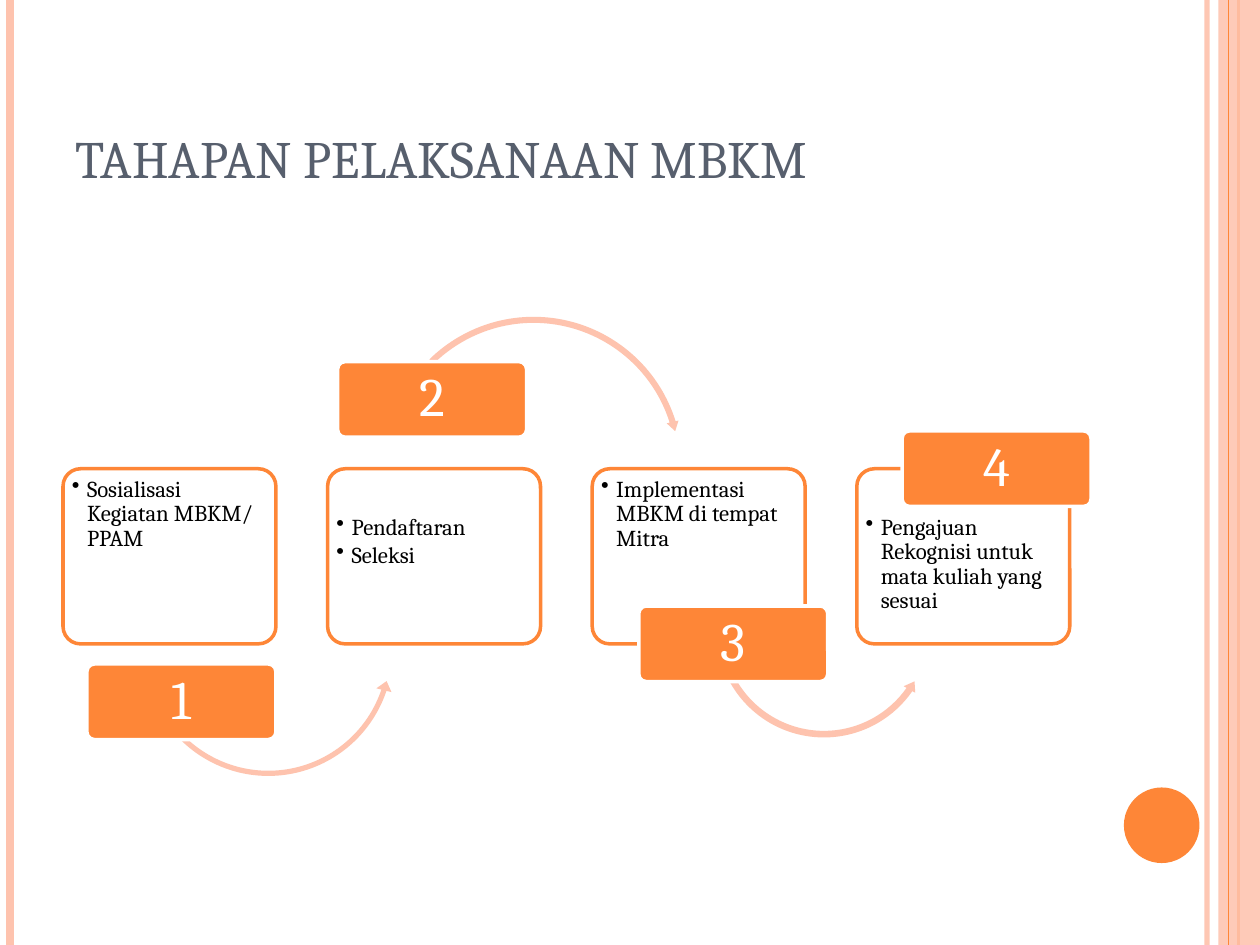
from pptx import Presentation
from pptx.dml.color import RGBColor
from pptx.enum.shapes import MSO_CONNECTOR, MSO_SHAPE
from pptx.enum.text import MSO_ANCHOR, PP_ALIGN
from pptx.oxml.ns import qn
from pptx.util import Inches, Pt
from lxml.etree import SubElement

FONT = "Cambria"
COLORS = {"orange": "FE8637", "peach": "FEC3AE", "slate": "575F6D",
          "white": "FFFFFF", "black": "000000"}

CARD_LEFT, CARD_TOP, CARD_PITCH = 0.5, 3.72, 2.1
CARD_SIZE = (1.69, 1.39)
BADGE_SIZE = (1.5, 0.6)

LEFT_ARROW = MSO_SHAPE.LEFT_CIRCULAR_ARROW
RIGHT_ARROW = MSO_SHAPE.CIRCULAR_ARROW

# Card lines, top inset of the text, badge position,
# then the arrow's preset, left, top, diameter and adjustments
STAGES = [
    (["Sosialisasi Kegiatan MBKM/ PPAM"], 0.03, (0.69, 5.27),
     (LEFT_ARROW, 1.1, 4.14, 2.06, (0.02, 2.68, 11.15, 80.96, 0.03))),
    (["Pendaftaran", "Seleksi"], 0.33, (2.68, 2.87),
     (RIGHT_ARROW, 3.03, 2.49, 2.41, (0.02, 2.27, 205.55, 135.33, 0.02))),
    (["Implementasi MBKM di tempat Mitra"], 0.03, (5.07, 4.81),
     (LEFT_ARROW, 5.66, 4.12, 1.76, (0.03, 3.15, 20.91, 90.25, 0.03))),
    (["Pengajuan Rekognisi untuk mata kuliah yang sesuai"], 0.33, (7.16, 3.42),
     None),
]

# x, colour, width in points, opacity in percent
RULES_BEHIND = [(9.58, "peach", 3, 93), (0.08, "peach", 4.5, 100),
                (9.83, "orange", 1.5, 100)]
RULE_IN_FRONT = (9.75, "orange", 0.75, 100)


def rgb(name):
    return RGBColor.from_string(COLORS[name])


def paint(fill, color, opacity=100):
    fill.solid()
    fill.fore_color.rgb = rgb(color)
    if opacity < 100:
        srgb = fill._xPr.find(qn("a:solidFill")).find(qn("a:srgbClr"))
        SubElement(srgb, qn("a:alpha")).set("val", str(opacity * 1000))


def style_text(paragraph, size, color):
    paragraph.font.name = FONT
    paragraph.font.size = Pt(size)
    paragraph.font.color.rgb = rgb(color)


def set_insets(frame, left, top, right, bottom):
    frame.margin_left, frame.margin_top = Inches(left), Inches(top)
    frame.margin_right, frame.margin_bottom = Inches(right), Inches(bottom)


def add_block(slide, preset, left, top, width, height, fill, line=None, opacity=100):
    """Add a filled preset shape, outlined at 2 pt when a line colour is given."""
    block = slide.shapes.add_shape(preset, Inches(left), Inches(top),
                                   Inches(width), Inches(height))
    block.shadow.inherit = False
    paint(block.fill, fill, opacity)
    if line:
        block.line.color.rgb = rgb(line)
        block.line.width = Pt(2)
    else:
        block.line.fill.background()
    return block


def add_rule(slide, x, color, width, opacity):
    """Add a vertical line over the full slide height."""
    rule = slide.shapes.add_connector(MSO_CONNECTOR.STRAIGHT, Inches(x), 0,
                                      Inches(x), Inches(7.5))
    rule.line.width = Pt(width)
    paint(rule.line.fill, color, opacity)
    SubElement(rule._element.spPr, qn("a:effectLst"))


def add_frame(slide):
    for rule in RULES_BEHIND:
        add_rule(slide, *rule)
    add_block(slide, MSO_SHAPE.RECTANGLE, 9.67, 0, 0.33, 7.5, "peach", opacity=87)
    add_rule(slide, *RULE_IN_FRONT)
    add_block(slide, MSO_SHAPE.OVAL, 8.92, 6.25, 0.6, 0.6, "orange")


def add_title(slide, text):
    title = slide.shapes.title
    title.left, title.top = Inches(0.5), Inches(0.52)
    title.width, title.height = Inches(8.17), Inches(1.03)
    title.text_frame.text = text
    title.text_frame.vertical_anchor = MSO_ANCHOR.BOTTOM
    heading = title.text_frame.paragraphs[0]
    heading.alignment = PP_ALIGN.LEFT
    style_text(heading, 30, "slate")


def add_bullet(paragraph):
    properties = paragraph._p.get_or_add_pPr()
    properties.set("marL", str(Inches(0.12)))
    properties.set("indent", str(-Inches(0.12)))
    bullet = properties.makeelement(qn("a:buChar"), {"char": "•"})
    properties.find(qn("a:defRPr")).addprevious(bullet)


def add_card(slide, left, lines, top_inset):
    card = add_block(slide, MSO_SHAPE.ROUNDED_RECTANGLE, left, CARD_TOP, *CARD_SIZE,
                     "white", "orange", opacity=90)
    card.adjustments[0] = 0.1
    frame = card.text_frame
    frame.text = "\n".join(lines)
    frame.vertical_anchor = MSO_ANCHOR.TOP
    set_insets(frame, 0.03, top_inset, 0.03, 0.03)
    for paragraph in frame.paragraphs:
        paragraph.alignment = PP_ALIGN.LEFT
        paragraph.line_spacing = 0.9
        paragraph.space_after = Pt(2)
        style_text(paragraph, 13, "black")
        add_bullet(paragraph)


def add_arrow(slide, preset, left, top, diameter, adjustments):
    arrow = add_block(slide, preset, left, top, diameter, diameter, "peach")
    for index, value in enumerate(adjustments):
        arrow.adjustments[index] = value


def add_badge(slide, left, top, number):
    badge = add_block(slide, MSO_SHAPE.ROUNDED_RECTANGLE, left, top, *BADGE_SIZE,
                      "orange", "white")
    badge.adjustments[0] = 0.1
    frame = badge.text_frame
    frame.text = str(number)
    frame.vertical_anchor = MSO_ANCHOR.MIDDLE
    set_insets(frame, 0.06, 0.04, 0.06, 0.04)
    label = frame.paragraphs[0]
    label.alignment = PP_ALIGN.CENTER
    label.line_spacing = 0.9
    style_text(label, 31, "white")


def main():
    presentation = Presentation()
    presentation.slide_width, presentation.slide_height = Inches(10), Inches(7.5)
    slide = presentation.slides.add_slide(presentation.slide_layouts[5])
    add_frame(slide)
    add_title(slide, "TAHAPAN PELAKSANAAN MBKM")
    for index, (lines, top_inset, badge_position, arrow) in enumerate(STAGES):
        add_card(slide, CARD_LEFT + index * CARD_PITCH, lines, top_inset)
        if arrow:
            add_arrow(slide, *arrow)
        add_badge(slide, *badge_position, index + 1)
    presentation.save("out.pptx")


if __name__ == "__main__":
    main()
